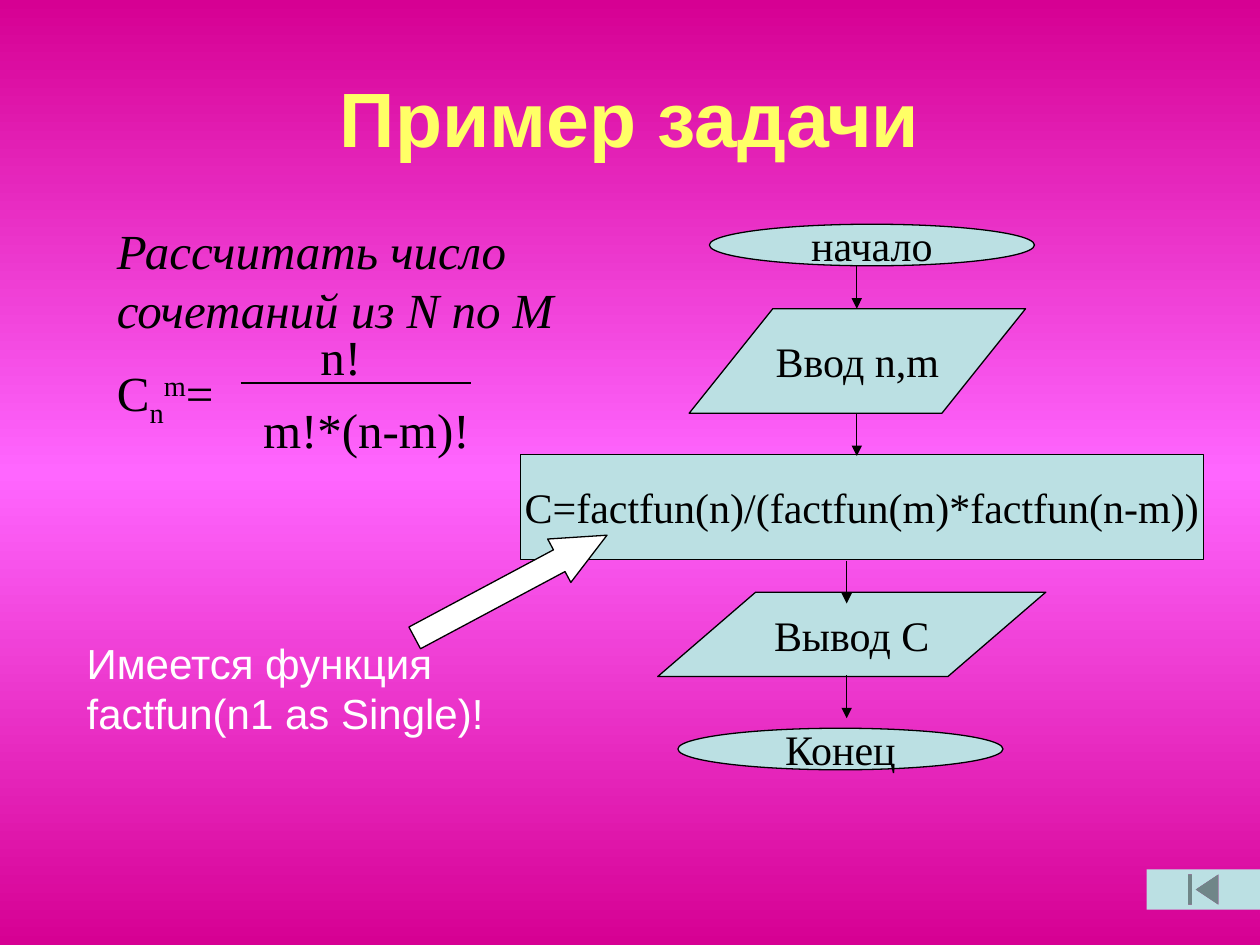
"""Build the slide with a sample combinatorics task and its flowchart."""
from copy import deepcopy
from dataclasses import dataclass

from pptx import Presentation
from pptx.dml.color import RGBColor
from pptx.enum.shapes import MSO_CONNECTOR, MSO_SHAPE
from pptx.enum.text import MSO_ANCHOR, PP_ALIGN
from pptx.oxml.ns import qn
from pptx.oxml.xmlchemy import OxmlElement
from pptx.util import Inches, Pt

CENTER, LEFT = PP_ALIGN.CENTER, PP_ALIGN.LEFT
MIDDLE = MSO_ANCHOR.MIDDLE
STRAIGHT = MSO_CONNECTOR.STRAIGHT
ELLIPSE, RECTANGLE = MSO_SHAPE.OVAL, MSO_SHAPE.RECTANGLE
PARALLELOGRAM = MSO_SHAPE.PARALLELOGRAM
RIGHT_ARROW = MSO_SHAPE.RIGHT_ARROW
BUTTON = MSO_SHAPE.ACTION_BUTTON_BEGINNING


@dataclass(frozen=True)
class Theme:
    """Colours, fonts and type sizes of the slide."""
    edge: str = "D60093"
    glow: str = "FF66FF"
    title: str = "FFFF66"
    ink: str = "000000"
    light: str = "FFFFFF"
    node: str = "BBE0E3"
    sans: str = "Arial"
    serif: str = "Times New Roman"
    title_size: int = 44
    formula_size: int = 28
    node_size: int = 24
    line_width: float = 0.75


@dataclass(frozen=True)
class Box:
    """Position and size in inches."""
    left: float
    top: float
    width: float
    height: float

    def lengths(self) -> tuple:
        """Return the four values as lengths."""
        return tuple(map(Inches, (self.left, self.top, self.width, self.height)))


@dataclass(frozen=True)
class Node:
    """One step of the flowchart."""
    text: str
    kind: int
    box: Box
    slant: float | None = None


@dataclass(frozen=True)
class Arrow:
    """A vertical flow arrow in inches."""
    x: float
    top: float
    length: float = 0.34


THEME = Theme()
NODES = (
    Node("начало", ELLIPSE, Box(5.63, 1.78, 2.58, 0.33)),
    Node("Ввод n,m", PARALLELOGRAM, Box(5.47, 2.45, 2.67, 0.83), 0.8),
    Node("C=factfun(n)/(factfun(m)*factfun(n-m))", RECTANGLE, Box(4.13, 3.61, 5.42, 0.83)),
    Node("Вывод С", PARALLELOGRAM, Box(5.22, 4.7, 3.08, 0.67), 1.16),
    Node("Конец", ELLIPSE, Box(5.38, 5.78, 2.58, 0.33)),
)
ARROWS = (Arrow(6.8, 2.11), Arrow(6.8, 3.28), Arrow(6.72, 4.45), Arrow(6.72, 5.36))


def style(font, face: str, size: int, color: str, bold: bool = False, italic: bool = False) -> None:
    """Set the face, size, colour and weight of a font."""
    font.name, font.size = face, Pt(size)
    font.bold, font.italic = bold, italic
    font.color.rgb = RGBColor.from_string(color)


def paint_background(slide) -> None:
    """Fill the background with a mirrored vertical gradient."""
    fill = slide.background.fill
    fill.gradient()
    fill.gradient_angle = 270
    first = fill.gradient_stops[0]._gs
    first.addnext(deepcopy(first))
    stops = ((0, THEME.edge), (0.5, THEME.glow), (1, THEME.edge))
    for stop, (position, color) in zip(fill.gradient_stops, stops):
        stop.position = position
        stop.color.rgb = RGBColor.from_string(color)


def add_title(slide, text: str, box: Box) -> None:
    """Write the title into its placeholder."""
    title = slide.shapes.title
    title.left, title.top, title.width, title.height = box.lengths()
    frame = title.text_frame
    frame.text = text
    frame.vertical_anchor = MIDDLE
    frame.paragraphs[0].alignment = CENTER
    style(frame.paragraphs[0].runs[0].font, THEME.sans, THEME.title_size, THEME.title, bold=True)


def add_text(slide, text: str, box: Box, face: str, size: int, color: str,
             align: int = LEFT, italic: bool = False):
    """Add a wrapping text box and return its frame."""
    frame = slide.shapes.add_textbox(*box.lengths()).text_frame
    frame.word_wrap = True
    frame.text = text
    para = frame.paragraphs[0]
    para.alignment = align
    style(para.runs[0].font, face, size, color, italic=italic)
    return frame


def add_formula(frame) -> None:
    """Append the left side of the formula with its two indices."""
    para = frame.add_paragraph()
    para.space_before = Pt(THEME.formula_size / 2)
    for text, baseline in (("C", 0), ("n", -25), ("m", 30), ("=", 0)):
        span = para.add_run()
        span.text = text
        style(span.font, THEME.serif, THEME.formula_size, THEME.ink)
        if baseline:
            span._r.get_or_add_rPr().set("baseline", str(baseline * 1000))


def add_filled(slide, kind: int, box: Box, color: str, outlined: bool = True):
    """Add a flat preset shape, outlined or not."""
    shape = slide.shapes.add_shape(kind, *box.lengths())
    shape.shadow.inherit = False
    shape.fill.solid()
    shape.fill.fore_color.rgb = RGBColor.from_string(color)
    if outlined:
        shape.line.color.rgb = RGBColor.from_string(THEME.ink)
        shape.line.width = Pt(THEME.line_width)
    else:
        shape.line.fill.background()
    return shape


def add_node(slide, node: Node) -> None:
    """Draw one labelled flowchart step."""
    shape = add_filled(slide, node.kind, node.box, THEME.node)
    if node.slant is not None:
        shape.adjustments[0] = node.slant
    frame = shape.text_frame
    frame.text = node.text
    frame.word_wrap = False
    frame.vertical_anchor = MIDDLE
    frame.paragraphs[0].alignment = CENTER
    style(frame.paragraphs[0].runs[0].font, THEME.serif, THEME.node_size, THEME.ink)


def add_line(slide, start: tuple, end: tuple, arrowhead: bool = False) -> None:
    """Draw a thin straight line, with an arrowhead at its end if asked."""
    line = slide.shapes.add_connector(STRAIGHT, *map(Inches, start + end))
    line.line.color.rgb = RGBColor.from_string(THEME.ink)
    line.line.width = Pt(THEME.line_width)
    properties = line._element.spPr
    if arrowhead:
        head = OxmlElement("a:tailEnd")
        head.set("type", "triangle")
        properties.find(qn("a:ln")).append(head)
    properties.append(OxmlElement("a:effectLst"))


def main() -> None:
    """Assemble and save the deck."""
    deck = Presentation()
    deck.slide_width, deck.slide_height = Inches(10), Inches(7.5)
    slide = deck.slides.add_slide(deck.slide_layouts[5])
    paint_background(slide)
    add_title(slide, "Пример задачи", Box(0.5, 0.3, 9, 1.25))

    formula = (THEME.serif, THEME.formula_size, THEME.ink)
    task = add_text(slide, "Рассчитать число сочетаний из N по M",
                    Box(0.83, 1.7, 4.02, 1.74), *formula, italic=True)
    add_formula(task)
    add_line(slide, (1.91, 3.04), (3.74, 3.04))
    add_text(slide, "n!", Box(2.08, 2.54, 1.25, 0.57), *formula, align=CENTER)
    add_text(slide, "m!*(n-m)!", Box(1.99, 3.12, 2.06, 0.57), *formula)

    for node in NODES:
        add_node(slide, node)
    for arrow in ARROWS:
        add_line(slide, (arrow.x, arrow.top), (arrow.x, arrow.top + arrow.length), arrowhead=True)

    add_text(slide, "Имеется функция factfun(n1 as Single)!", Box(0.59, 5.01, 3.7, 0.9),
             THEME.sans, THEME.node_size, THEME.light)
    pointer = add_filled(slide, RIGHT_ARROW, Box(3.19, 4.46, 1.73, 0.39), THEME.light)
    pointer.rotation = 331.9
    pointer.adjustments[0], pointer.adjustments[1] = 0.5, 1.1
    add_filled(slide, BUTTON, Box(9.1, 6.9, 0.9, 0.32), THEME.node, outlined=False)
    deck.save("out.pptx")


if __name__ == "__main__":
    main()
